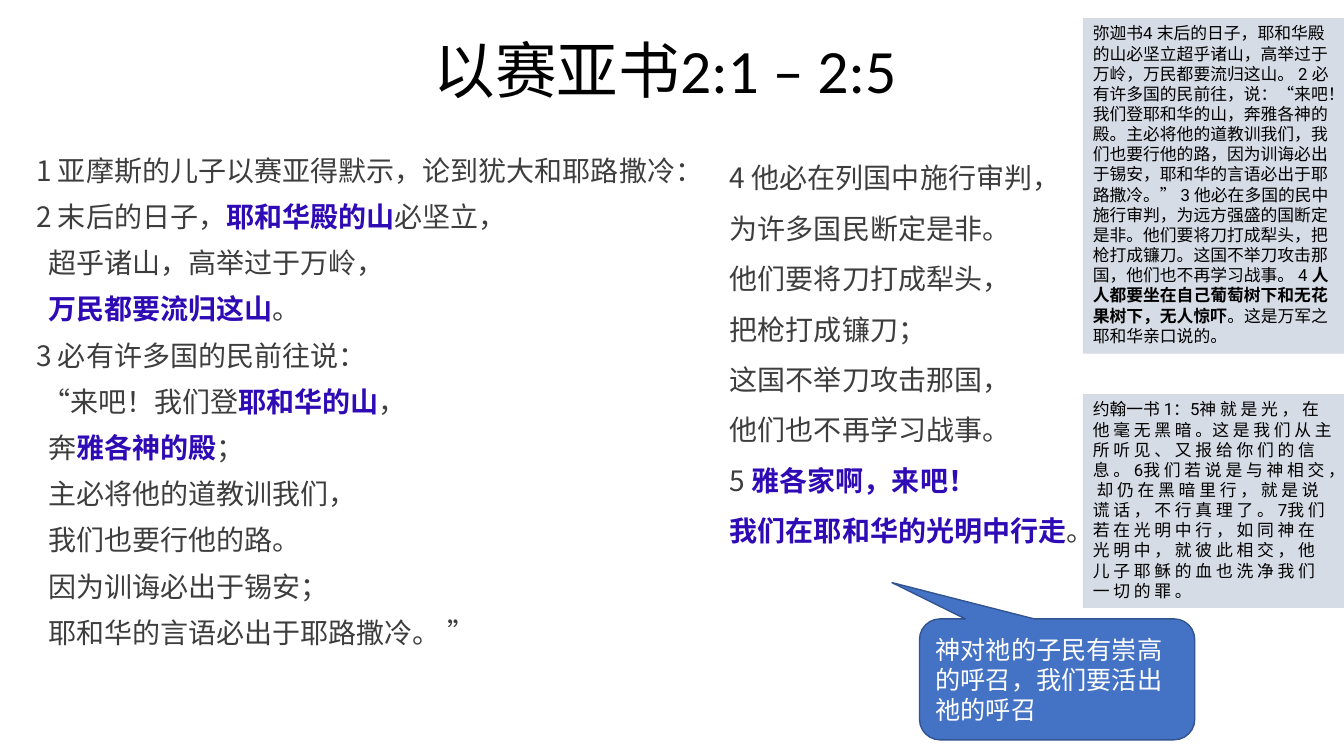
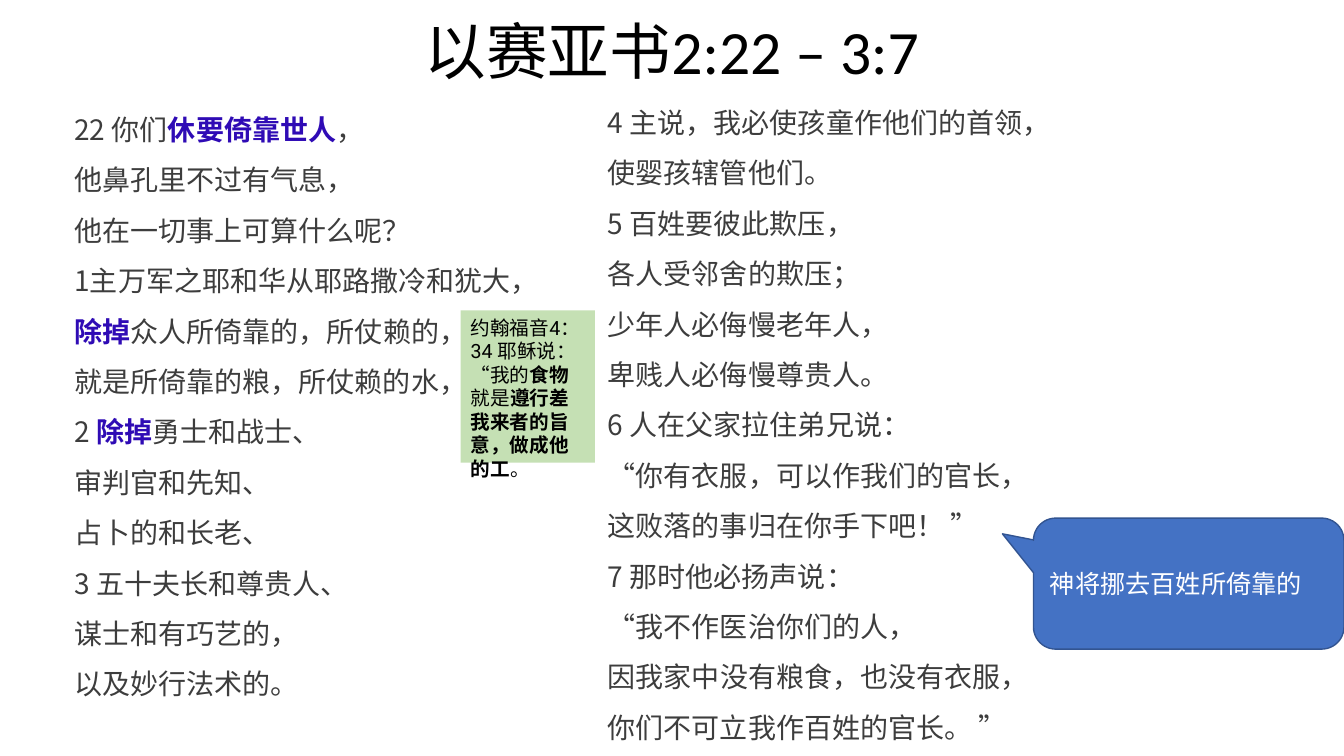
from lxml.etree import SubElement
from pptx import Presentation
from pptx.dml.color import RGBColor
from pptx.enum.shapes import MSO_SHAPE as SHAPE
from pptx.enum.text import MSO_ANCHOR as ANCHOR, PP_ALIGN as ALIGN
from pptx.oxml.ns import qn
from pptx.util import Pt

PX = 9144
COLORS = {
    "title": "000000", "verse": "3D3D3D", "emphasis": "2F0BB5",
    "note": "000000", "blue_note": "D6DCE5", "green_note": "C5E0B4",
    "callout": "4472C4", "callout_line": "325491", "callout_text": "FFFFFF",
}
CJK_FONT = "Noto Sans CJK SC"


def rgb(name):
    return RGBColor.from_string(COLORS[name])


def add_text(slide, text, at, kind=None, fill=None, line=None, tail=None,
             font=CJK_FONT, size=20, color="verse", strong="emphasis",
             align=ALIGN.LEFT, anchor=ANCHOR.TOP, spacing=None, before=0,
             indents=None):
    box = [n * PX for n in at]
    if kind is None:
        shape = slide.shapes.add_textbox(*box)
    else:
        shape = slide.shapes.add_shape(kind, *box)
        shape.shadow.inherit = False
        shape.fill.solid()
        shape.fill.fore_color.rgb = rgb(fill)
        if line:
            shape.line.color.rgb = rgb(line)
            shape.line.width = Pt(1)
        else:
            shape.line.fill.background()
    for i, value in enumerate(tail or []):
        shape.adjustments[i] = value
    frame = shape.text_frame
    frame.word_wrap = True
    frame.vertical_anchor = anchor
    for i, content in enumerate(text.split("\n")):
        paragraph = frame.add_paragraph() if i else frame.paragraphs[0]
        paragraph.alignment = align
        paragraph.space_before = Pt(before)
        if spacing:
            paragraph.line_spacing = spacing
        if indents:
            margin = indents[i % len(indents)] * PX
            paragraph._p.get_or_add_pPr().set("marL", str(margin))
        for j, piece in enumerate(content.split("*")):
            if not piece:
                continue
            run = paragraph.add_run()
            run.text = piece
            run.font.name = font
            run.font.size = Pt(size)
            run.font.bold = j % 2 == 1
            run.font.color.rgb = rgb(strong if j % 2 else color)
            properties = run._r.get_or_add_rPr()
            properties.set("lang", "zh-CN")
            SubElement(properties, qn("a:ea")).set("typeface", CJK_FONT)


TITLE = dict(font="Calibri", size=44, color="title", align=ALIGN.CENTER,
             anchor=ANCHOR.MIDDLE, spacing=0.9)
VERSES = dict(spacing=1.5, indents=[50])
NOTE = dict(kind=SHAPE.RECTANGLE, font="Roboto", color="note", strong="note")
CALLOUT = dict(kind=SHAPE.ROUNDED_RECTANGULAR_CALLOUT, fill="callout",
               line="callout_line", font="Calibri", size=18,
               color="callout_text", anchor=ANCHOR.MIDDLE)

OPENING_VERSES = """1 亚摩斯的儿子以赛亚得默示，论到犹大和耶路撒冷：
2 末后的日子，*耶和华殿的山*必坚立，
超乎诸山，高举过于万岭，
*万民都要流归这山*。
3 必有许多国的民前往说：
“来吧！我们登*耶和华的山*，
奔*雅各神的殿*；
主必将他的道教训我们，
我们也要行他的路。
因为训诲必出于锡安；
耶和华的言语必出于耶路撒冷。 ”"""

PEACE_VERSES = """4 他必在列国中施行审判，
为许多国民断定是非。
他们要将刀打成犁头，
把枪打成镰刀；
这国不举刀攻击那国，
他们也不再学习战事。
5 *雅各家啊，来吧！*
*我们在耶和华的光明中行走*。"""

MICAH = (
    "弥迦书4 末后的日子，耶和华殿的山必坚立超乎诸山，高举过于万岭，"
    "万民都要流归这山。 2 必有许多国的民前往，说：“来吧！我们登耶和华的山，"
    "奔雅各神的殿。主必将他的道教训我们，我们也要行他的路，因为训诲必出于锡安，"
    "耶和华的言语必出于耶路撒冷。” 3 他必在多国的民中施行审判，"
    "为远方强盛的国断定是非。他们要将刀打成犁头，把枪打成镰刀。"
    "这国不举刀攻击那国，他们也不再学习战事。 4 "
    "*人人都要坐在自己葡萄树下和无花果树下，无人惊吓*。这是万军之耶和华亲口说的。"
)

FIRST_JOHN = (
    "约翰一书 1：5神 就 是 光 ， 在 他 毫 无 黑 暗 。这 是 我 们 从 主 所 听 见 、 "
    "又 报 给 你 们 的 信 息 。 6我 们 若 说 是 与 神 相 交 ， 却 仍 在 黑 暗 里 行 ， "
    "就 是 说 谎 话 ， 不 行 真 理 了 。 7我 们 若 在 光 明 中 行 ， 如 同 神 在 光 明 中 ， "
    "就 彼 此 相 交 ， 他 儿 子 耶 稣 的 血 也 洗 净 我 们 一 切 的 罪 。"
)

RELIANCE_VERSES = """22 你们*休要倚靠世人*，
他鼻孔里不过有气息，
他在一切事上可算什么呢？
1主万军之耶和华从耶路撒冷和犹大，
*除掉*众人所倚靠的，所仗赖的，
就是所倚靠的粮，所仗赖的水，
2 *除掉*勇士和战士、
审判官和先知、
占卜的和长老、
3 五十夫长和尊贵人、
谋士和有巧艺的，
以及妙行法术的。"""

RULER_VERSES = """4 主说，我必使孩童作他们的首领，
使婴孩辖管他们。
5 百姓要彼此欺压，
各人受邻舍的欺压；
少年人必侮慢老年人，
卑贱人必侮慢尊贵人。
6 人在父家拉住弟兄说：
“你有衣服，可以作我们的官长，
这败落的事归在你手下吧！ ”
7 那时他必扬声说：
“我不作医治你们的人，
因我家中没有粮食，也没有衣服，
你们不可立我作百姓的官长。 ”"""

JOHN = "约翰福音4：34 耶稣说： “我的*食物*就是*遵行差我来者的旨意，做成他的工*。"

SLIDES = [
    [
        ("以赛亚书2:1 – 2:5 ", (14, 0, 1305, 145), TITLE),
        (OPENING_VERSES, (26, 147, 669, 507),
         dict(before=9, indents=[0, 0, 12, 12, 0, 6, 12, 12, 12, 12, 12])),
        (PEACE_VERSES, (664, 138, 435, 444), VERSES),
        (MICAH, (1074, 18, 259, 333), dict(NOTE, fill="blue_note", size=12)),
        (FIRST_JOHN, (1074, 391, 259, 212), dict(NOTE, fill="blue_note", size=12)),
        ("神对祂的子民有崇高的呼召，我们要活出祂的呼召", (912, 614, 273, 120),
         dict(CALLOUT, tail=[-0.6, -0.8, 0.17])),
    ],
    [
        ("以赛亚书2:22 – 3:7", (14, -18, 1305, 145), TITLE),
        (RELIANCE_VERSES, (14, 90, 576, 646), VERSES),
        (RULER_VERSES, (543, 83, 519, 661), VERSES),
        (JOHN, (457, 308, 133, 151), dict(NOTE, fill="green_note", size=14)),
        ("神将挪去百姓所倚靠的", (1025, 514, 308, 130),
         dict(CALLOUT, tail=[-0.6, -0.38, 0.17])),
    ],
]

deck = Presentation()
deck.slide_width = 1333 * PX
deck.slide_height = 750 * PX
for contents in SLIDES:
    slide = deck.slides.add_slide(deck.slide_layouts[6])
    for text, at, style in contents:
        add_text(slide, text, at, **style)
deck.save("out.pptx")
